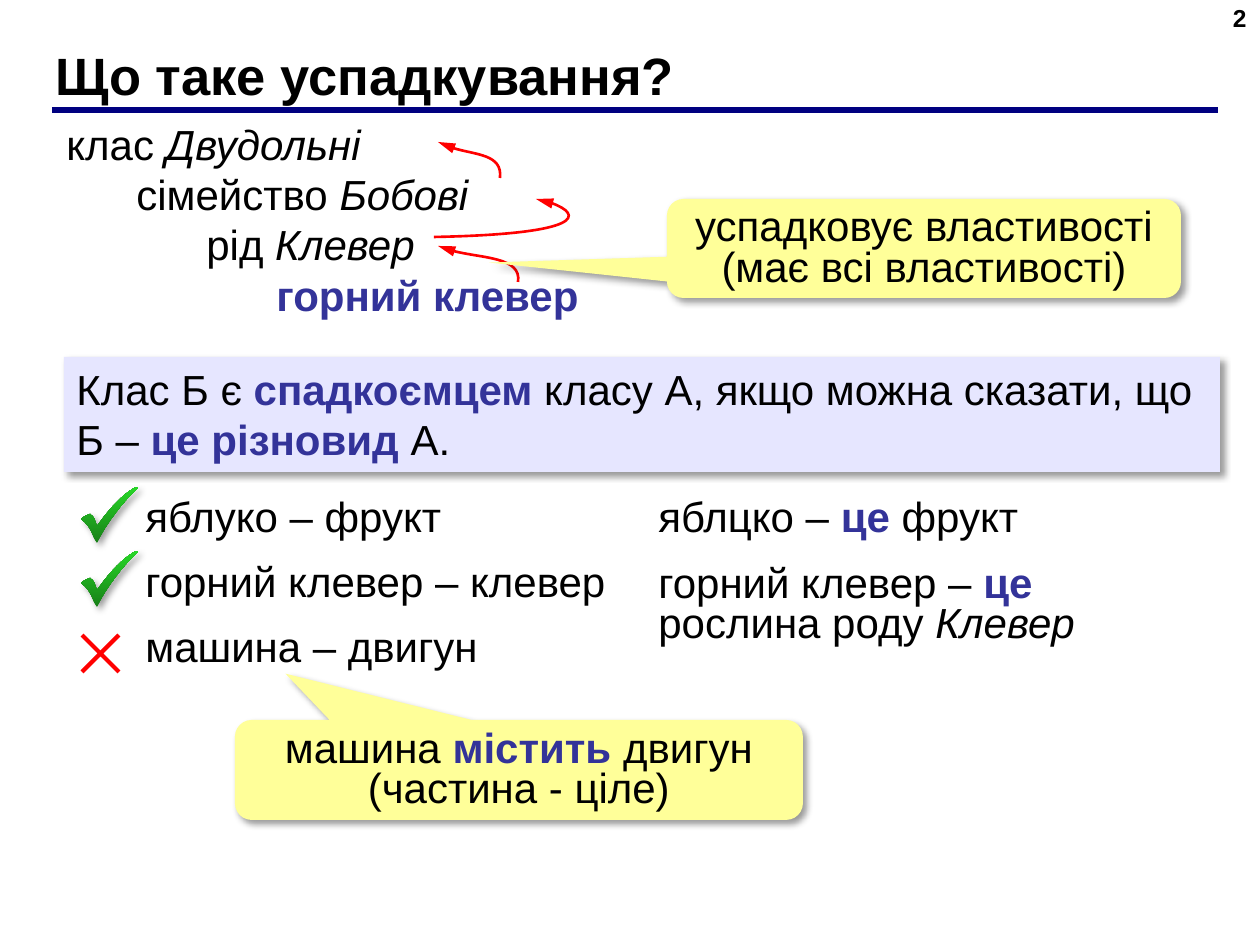
from lxml.etree import SubElement
from pptx import Presentation
from pptx.dml.color import RGBColor
from pptx.enum.shapes import MSO_CONNECTOR, MSO_SHAPE
from pptx.enum.text import MSO_ANCHOR, MSO_AUTO_SIZE, PP_ALIGN
from pptx.oxml.ns import qn
from pptx.util import Pt

EMU_PER_PX = 914400 / 126
COLORS = {
    "text": "000000", "accent": "333399", "rule": "000080", "red": "FF0000",
    "callout": "FFFF99", "definition": "E6E6FF",
    "check_dark": "178017", "check_light": "28D728",
}
PLAIN, ITALIC, STRONG = "plain", "italic", "strong"


def px(length):
    """Turn pixels into EMU."""
    return round(length * EMU_PER_PX)


def rgb(name):
    """Return a palette colour."""
    return RGBColor.from_string(COLORS[name])


def write(paragraph, runs, size=24, bold=False):
    """Fill a paragraph with (text, style) runs."""
    for text, style in runs:
        run = paragraph.add_run()
        run.text = text
        font = run.font
        font.name, font.size = "Arial", Pt(size)
        font.bold = bold or style == STRONG
        font.italic = style == ITALIC
        font.color.rgb = rgb("accent" if style == STRONG else "text")


def add_text(slide, box, paragraphs, indent=0, spacing=None):
    """Add a wrapped text box, each paragraph indented one step further."""
    frame = slide.shapes.add_textbox(*map(px, box)).text_frame
    frame.word_wrap = True
    for level, runs in enumerate(paragraphs):
        paragraph = frame.paragraphs[0] if level == 0 else frame.add_paragraph()
        paragraph.line_spacing = spacing
        if indent:
            paragraph._p.get_or_add_pPr().set("marL", str(px(indent * level)))
        write(paragraph, runs)


def add_shadow(shape):
    """Give a shape a soft shadow to the lower right."""
    shape.shadow.inherit = False
    effects = shape._element.spPr.find(qn("a:effectLst"))
    shadow = SubElement(effects, qn("a:outerShdw"), blurRad=str(Pt(4)),
                        dist=str(Pt(3)), dir="2700000", algn="tl", rotWithShape="0")
    color = SubElement(shadow, qn("a:srgbClr"), val=COLORS["text"])
    SubElement(color, qn("a:alpha"), val="40000")


def add_panel(slide, kind, box, fill):
    """Add a filled preset shape without outline or shadow."""
    panel = slide.shapes.add_shape(kind, *map(px, box))
    panel.fill.solid()
    panel.fill.fore_color.rgb = rgb(fill)
    panel.line.fill.background()
    panel.shadow.inherit = False
    return panel


def add_outline(slide, origin, start, segments, close):
    """Draw lines (one point) and cubic curves (three points) from the origin."""
    left, top = origin
    points = [start] + [point for segment in segments for point in segment]
    corners = [(px(left + x), px(top + y)) for x, y in points]
    builder = slide.shapes.build_freeform(*corners[0], scale=1.0)
    builder.add_line_segments(corners[1:], close=close)
    outline = builder.convert_to_shape()
    outline.shadow.inherit = False
    lines = iter(list(outline._element.spPr.iter(qn("a:lnTo"))))
    for segment in segments:
        first, *others = [next(lines) for _ in segment]
        if others:
            first.tag = qn("a:cubicBezTo")
        for line in others:
            first.append(line[0])
            line.getparent().remove(line)
    return outline


def add_header(slide, box):
    """Place the title, the rule below it and the slide number."""
    left, top, width, height = box
    title = slide.shapes.title
    title.left, title.top, title.width, title.height = map(px, box)
    frame = title.text_frame
    frame.auto_size = MSO_AUTO_SIZE.NONE
    frame.vertical_anchor = MSO_ANCHOR.MIDDLE
    frame.paragraphs[0].alignment = PP_ALIGN.LEFT
    write(frame.paragraphs[0], [("Що таке успадкування?", PLAIN)], 30, True)

    rule_y = px(top + height + 2)
    rule = slide.shapes.add_connector(MSO_CONNECTOR.STRAIGHT, px(left + 9), rule_y,
                                      px(left + width + 21), rule_y)
    rule.line.color.rgb = rgb("rule")
    rule.line.width = Pt(3)
    SubElement(rule._element.spPr, qn("a:effectLst"))

    number_box = (left + 922, top - 45, 294, 66)
    number = slide.shapes.add_textbox(*map(px, number_box)).text_frame.paragraphs[0]
    number.alignment = PP_ALIGN.RIGHT
    write(number, [("2", PLAIN)], 14, True)


def add_arrow(slide, origin, start, curve):
    """Draw a curved red arrow."""
    arrow = add_outline(slide, origin, start, [curve], False)
    arrow.fill.background()
    arrow.line.color.rgb = rgb("red")
    arrow.line.width = Pt(1.5)
    SubElement(arrow.line._get_or_add_ln(), qn("a:tailEnd"),
               type="triangle", w="med", len="lg")


def add_hierarchy(slide, box):
    """Place the stepped classification and its arrows."""
    add_text(slide, box, [
        [("клас ", PLAIN), ("Двудольні", ITALIC)],
        [("сімейство ", PLAIN), ("Бобові", ITALIC)],
        [("рід ", PLAIN), ("Клевер", ITALIC)],
        [("горний клевер", STRONG)],
    ], indent=70)
    arrows = [
        ((464, 170), [(468, 145), (411, 146), (384, 134)]),
        ((380, 125), [(533, 122), (530, 96), (482, 87)]),
        ((446, 66), [(449, 42), (406, 42), (384, 30)]),
    ]
    for start, curve in arrows:
        add_arrow(slide, box[:2], start, curve)


def add_callout(slide, box, tip, runs):
    """Add a yellow callout pointing at a tip given in shares of its size."""
    callout = add_panel(slide, MSO_SHAPE.ROUNDED_RECTANGULAR_CALLOUT, box, "callout")
    callout.adjustments[0], callout.adjustments[1] = tip
    add_shadow(callout)
    callout.text_frame.word_wrap = True
    callout.text_frame.margin_top = px(9)
    paragraph = callout.text_frame.paragraphs[0]
    paragraph.alignment = PP_ALIGN.CENTER
    paragraph.line_spacing = 0.8
    write(paragraph, runs)


def add_definition(slide, box):
    """Place the definition band."""
    band = add_panel(slide, MSO_SHAPE.RECTANGLE, box, "definition")
    add_shadow(band)
    band.text_frame.word_wrap = True
    band.text_frame.vertical_anchor = MSO_ANCHOR.TOP
    paragraph = band.text_frame.paragraphs[0]
    paragraph.alignment = PP_ALIGN.LEFT
    write(paragraph, [
        ("Клас Б є ", PLAIN), ("спадкоємцем ", STRONG),
        ("класу А, якщо можна сказати, що Б – ", PLAIN),
        ("це різновид ", STRONG), ("А.", PLAIN),
    ])


def add_check(slide, origin):
    """Draw a green check mark."""
    check = add_outline(slide, origin, (9, 27), [
        [(4, 29), (2, 30), (0, 32)],
        [(11, 40), (11, 49), (16, 56)],
        [(24, 38), (44, 12), (57, 1)],
        [(55, 0)],
        [(39, 9), (27, 24), (16, 39)],
        [(14, 35), (14, 30), (9, 27)],
    ], True)
    check.fill.gradient()
    check.fill.gradient_angle = 90
    for stop, name in zip(check.fill.gradient_stops, ("check_dark", "check_light")):
        stop.color.rgb = rgb(name)
        stop.position = float(name == "check_light")
    check.line.fill.background()
    add_shadow(check)


def add_examples(slide, box):
    """Place the marked examples and their explanations."""
    left, top, width, height = box
    row_step = height // 3
    examples = ["яблуко – фрукт", "горний клевер – клевер", "машина – двигун"]
    for row, example in enumerate(examples):
        row_box = (left + 70, top + row * row_step, 496, 64)
        add_text(slide, row_box, [[(example, PLAIN)]])
    for row in range(2):
        add_check(slide, (left + 18, top + 3 + row * 64))
    cross = add_panel(slide, MSO_SHAPE.MATH_MULTIPLY,
                      (left + 2, top + 134, 71, 71), "red")
    cross.adjustments[0] = 0.059

    column = left + 583
    add_text(slide, (column, top, width - 583, 64),
             [[("яблцко – ", PLAIN), ("це", STRONG), (" фрукт", PLAIN)]])
    add_text(slide, (column, top + 76, width - 583, 95),
             [[("горний клевер – ", PLAIN), ("це", STRONG),
               (" рослина роду ", PLAIN), ("Клевер", ITALIC)]], spacing=0.8)


def main():
    """Build and save the slide."""
    deck = Presentation()
    deck.slide_width, deck.slide_height = px(1260), px(945)
    slide = deck.slides.add_slide(deck.slide_layouts[5])
    add_header(slide, (43, 42, 1154, 66))
    add_hierarchy(slide, (54, 112, 630, 217))
    add_callout(slide, (667, 199, 514, 99), (-0.846, 0.142),
                [("успадковує властивості (має всі властивості)", PLAIN)])
    add_definition(slide, (64, 357, 1156, 115))
    add_examples(slide, (63, 484, 1057, 196))
    add_callout(slide, (235, 720, 568, 100), (-0.411, -0.963),
                [("машина ", PLAIN), ("містить ", STRONG),
                 ("двигун (частина - ціле)", PLAIN)])
    deck.save("out.pptx")


if __name__ == "__main__":
    main()
